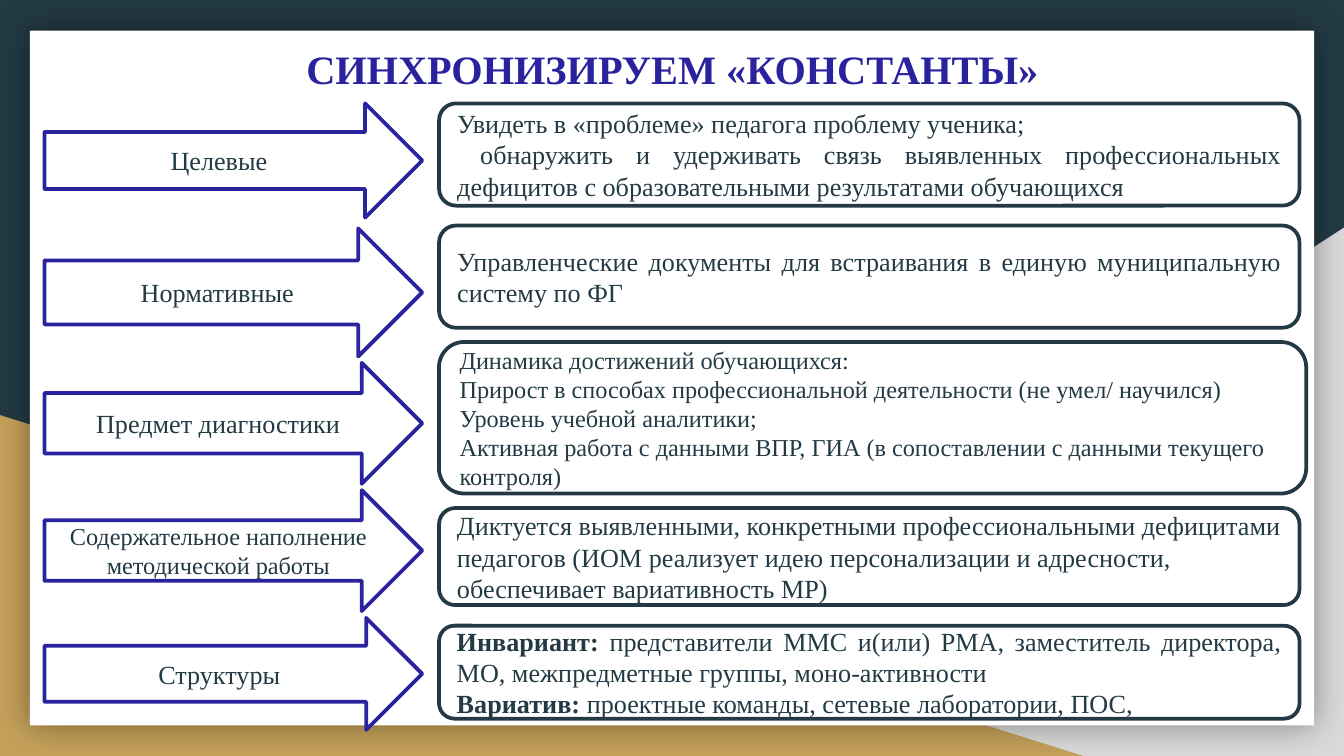
from lxml import etree
from pptx import Presentation
from pptx.dml.color import RGBColor
from pptx.enum.shapes import MSO_SHAPE
from pptx.enum.text import MSO_ANCHOR, MSO_AUTO_SIZE, PP_ALIGN
from pptx.oxml.ns import qn
from pptx.util import Pt

ARROW, ROUND = MSO_SHAPE.RIGHT_ARROW, MSO_SHAPE.ROUNDED_RECTANGLE
RECT, WEDGE = MSO_SHAPE.RECTANGLE, MSO_SHAPE.RIGHT_TRIANGLE
LEFT, MID, FULL = PP_ALIGN.LEFT, PP_ALIGN.CENTER, PP_ALIGN.JUSTIFY

COLORS = {"dark": "233A44", "gray": "D9D9D9", "gold": "C4A15A",
          "white": "FFFFFF", "blue": "2B229E", "black": "000000"}
FONT = "Times New Roman"
TITLE = "СИНХРОНИЗИРУЕМ «КОНСТАНТЫ»"

ROWS = [
    {"name": "Целевые", "arrow": (55.4, 61.2), "box": (55.4, 54.8),
     "align": FULL, "lines": [
         "Увидеть в «проблеме» педагога проблему ученика;",
         " обнаружить и удерживать связь выявленных профессиональных "
         "дефицитов с образовательными результатами обучающихся"]},
    {"name": "Нормативные", "arrow": (122.4, 68.6), "box": (120.8, 54.8),
     "align": FULL, "lines": [
         "Управленческие документы для встраивания в единую "
         "муниципальную систему по ФГ"]},
    {"name": "Предмет диагностики", "arrow": (194.4, 64.8), "box": (183.2, 81.2),
     "align": LEFT, "size": 13, "width": 464.6, "lines": [
         "Динамика достижений обучающихся:",
         "Прирост в способах профессиональной деятельности (не умел/ научился)",
         "Уровень учебной аналитики;",
         "Активная работа с данными ВПР, ГИА (в сопоставлении с данными "
         "текущего контроля)"]},
    {"name": "Содержательное наполнение методической работы", "label": 13,
     "arrow": (262.6, 64.8), "box": (272.2, 52),
     "align": LEFT, "lines": [
         "Диктуется выявленными, конкретными профессиональными дефицитами "
         "педагогов (ИОМ реализует идею персонализации и адресности, "
         "обеспечивает вариативность МР)"]},
    {"name": "Структуры", "arrow": (331, 60), "box": (335.2, 49.8),
     "align": FULL, "lines": [
         ("Инвариант: ", "представители ММС и(или) РМА, заместитель "
          "директора, МО, межпредметные группы, моно-активности"),
         ("Вариатив:", " проектные команды, сетевые лаборатории, ПОС,")]},
]


def tint(name):
    return RGBColor.from_string(COLORS[name])


def place(shape, left, top, width, height):
    shape.left, shape.top = Pt(left), Pt(top)
    shape.width, shape.height = Pt(width), Pt(height)


def draw(slide, kind, area, fill, line=None):
    shape = slide.shapes.add_shape(kind, *map(Pt, area))
    shape.shadow.inherit = False
    shape.fill.solid()
    shape.fill.fore_color.rgb = tint(fill)
    if line:
        shape.line.color.rgb = tint(line)
        shape.line.width = Pt(2)
    else:
        shape.line.fill.background()
    return shape


def write(shape, lines, size=14, color="dark", align=LEFT, bold=False):
    frame = shape.text_frame
    frame.word_wrap = True
    frame.auto_size = MSO_AUTO_SIZE.NONE
    frame.vertical_anchor = MSO_ANCHOR.MIDDLE
    for i, line in enumerate(lines):
        para = frame.add_paragraph() if i else frame.paragraphs[0]
        para.alignment = align
        head, tail = line if isinstance(line, tuple) else ("", line)
        for text, heavy in ((head, True), (tail, bold)):
            if text:
                run = para.add_run()
                run.text = text
                run.font.name = FONT
                run.font.size = Pt(size)
                run.font.bold = heavy
                run.font.color.rgb = tint(color)


def glow(shape):
    group = shape.element.spPr.find(qn("a:effectLst"))
    shade = etree.SubElement(group, qn("a:outerShdw"), blurRad=str(Pt(18)),
                             dist="0", algn="ctr", rotWithShape="0")
    color = etree.SubElement(shade, qn("a:srgbClr"), val=COLORS["black"])
    etree.SubElement(color, qn("a:alpha"), val="40000")


def main():
    deck = Presentation()
    deck.slide_width, deck.slide_height = Pt(720), Pt(405)
    slide = deck.slides.add_slide(deck.slide_layouts[5])
    slide.background.fill.solid()
    slide.background.fill.fore_color.rgb = tint("dark")

    wedge = draw(slide, WEDGE, (282, 122, 438, 283), "gray")
    wedge.element.spPr.find(qn("a:xfrm")).set("flipH", "1")
    draw(slide, WEDGE, (0, 222.4, 580.4, 182.6), "gold")
    glow(draw(slide, RECT, (16, 16.4, 688, 372.2), "white"))

    title = slide.shapes.title
    slide.shapes.element.append(title.element)
    place(title, 64.8, 17.4, 591, 38.2)
    write(title, [TITLE], size=21.6, color="blue", align=MID, bold=True)
    frame = title.text_frame
    frame.margin_left = frame.margin_right = Pt(7.2)
    frame.margin_top = frame.margin_bottom = Pt(7.2)

    for row in ROWS:
        top, high = row["arrow"]
        arrow = draw(slide, ARROW, (23.8, top, 202.4, high), "white", "blue")
        write(arrow, [row["name"]], size=row.get("label", 14), align=MID)
        top, high = row["box"]
        area = (235.2, top, row.get("width", 461), high)
        box = draw(slide, ROUND, area, "white", "dark")
        write(box, row["lines"], size=row.get("size", 14), align=row["align"])

    deck.save("out.pptx")


if __name__ == "__main__":
    main()
